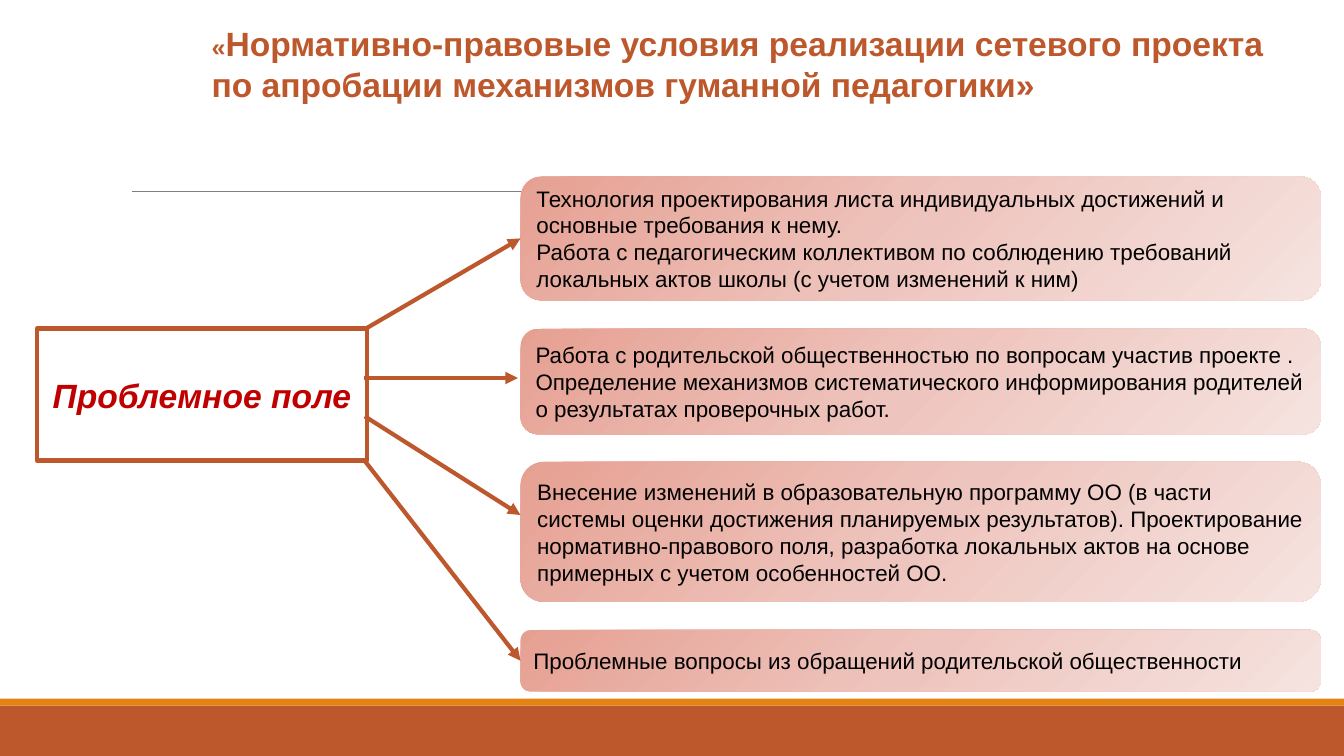
import copy

import pptx
import pptx.dml.color
import pptx.enum.shapes
import pptx.enum.text
import pptx.oxml
import pptx.oxml.ns
import pptx.util

Pt = pptx.util.Pt
SHAPE = pptx.enum.shapes.MSO_SHAPE
ALIGN = pptx.enum.text.PP_ALIGN
MIDDLE = pptx.enum.text.MSO_ANCHOR.MIDDLE

COLORS = {
    "rust": "BD582C",
    "orange": "E48312",
    "rule": "808080",
    "white": "FFFFFF",
    "red": "C00000",
    "black": "000000",
}
GRADIENT = [(0, "E6A092"), (0.5, "EEC5BE"), (1, "F6E3DF")]
CARD_LEFT, CARD_WIDTH = 371.8, 571.7
CARDS = [
    (126, 88.6, [
        "Технология проектирования листа индивидуальных достижений и основные требования к нему.",
        "Работа с педагогическим коллективом по соблюдению требований локальных актов школы (с учетом изменений к ним)",
    ]),
    (234.7, 75.6, [
        "Работа с родительской общественностью по вопросам участив проекте .",
        "Определение механизмов систематического информирования родителей о результатах проверочных работ.",
    ]),
    (329.8, 100.1, [
        "Внесение изменений в образовательную программу ОО (в части системы оценки достижения планируемых результатов). "
        "Проектирование нормативно-правового поля, разработка локальных актов на основе примерных с учетом особенностей ОО.",
    ]),
    (450, 43.9, ["Проблемные вопросы из обращений родительской общественности"]),
]


def rgb(name):
    return pptx.dml.color.RGBColor.from_string(COLORS.get(name, name))


def set_font(font, size, color, bold=False, italic=False):
    font.name = "Arial"
    font.size = Pt(size)
    font.bold = bold
    font.italic = italic
    font.color.rgb = rgb(color)


def add_box(s, kind, x, y, w, h, fill=None, line=None):
    sp = s.shapes.add_shape(kind, Pt(x), Pt(y), Pt(w), Pt(h))
    sp.shadow.inherit = False
    if fill:
        sp.fill.solid()
        sp.fill.fore_color.rgb = rgb(fill)
    if line:
        sp.line.color.rgb = rgb(line)
        sp.line.width = Pt(3)
    else:
        sp.line.fill.background()
    return sp


def add_line(s, x1, y1, x2, y2, color, width, arrow=False):
    cx = s.shapes.add_connector(
        pptx.enum.shapes.MSO_CONNECTOR.STRAIGHT, Pt(x1), Pt(y1), Pt(x2), Pt(y2))
    cx.line.color.rgb = rgb(color)
    cx.line.width = Pt(width)
    if arrow:
        tail = pptx.oxml.parse_xml(
            f'<a:tailEnd {pptx.oxml.ns.nsdecls("a")} type="triangle"/>')
        cx.line._get_or_add_ln().append(tail)
    cx._element.spPr.append(
        pptx.oxml.parse_xml(f'<a:effectLst {pptx.oxml.ns.nsdecls("a")}/>'))
    return cx


def add_gradient(sp):
    sp.fill.gradient()
    sp.fill.gradient_angle = 315
    stops = sp._element.spPr.find(".//" + pptx.oxml.ns.qn("a:gsLst"))
    stops.insert(1, copy.deepcopy(stops[0]))
    for stop, (position, color) in zip(sp.fill.gradient_stops, GRADIENT):
        stop.position = position
        stop.color.rgb = rgb(color)


def add_card(s, y, h, texts):
    sp = add_box(s, SHAPE.ROUNDED_RECTANGLE, CARD_LEFT, y, CARD_WIDTH, h)
    add_gradient(sp)
    tf = sp.text_frame
    tf.word_wrap = True
    tf.vertical_anchor = MIDDLE
    for i, text in enumerate(texts):
        p = tf.add_paragraph() if i else tf.paragraphs[0]
        p.text = text
        p.alignment = ALIGN.LEFT
        set_font(p.font, 16, "black")
    return sp


def add_title(s):
    tf = s.shapes.add_textbox(Pt(144), Pt(13), Pt(774), Pt(65.5)).text_frame
    tf.word_wrap = True
    p = tf.paragraphs[0]
    for text, size in [
        ("«", 18),
        ("Нормативно-правовые условия реализации сетевого проекта по апробации механизмов гуманной педагогики»", 24),
    ]:
        r = p.add_run()
        r.text = text
        set_font(r.font, size, "rust", bold=True)


def add_problem_box(s):
    sp = add_box(s, SHAPE.RECTANGLE, 26.6, 234.7, 235.4, 94.3, "white", "rust")
    tf = sp.text_frame
    tf.word_wrap = True
    tf.vertical_anchor = MIDDLE
    p = tf.paragraphs[0]
    p.text = "Проблемное поле"
    p.alignment = ALIGN.CENTER
    set_font(p.font, 24, "red", bold=True, italic=True)


def main():
    prs = pptx.Presentation()
    prs.slide_width, prs.slide_height = Pt(960), Pt(540)
    s = prs.slides.add_slide(prs.slide_layouts[6])

    add_box(s, SHAPE.RECTANGLE, 0, 504, 960, 36, "rust")
    add_box(s, SHAPE.RECTANGLE, 0, 499, 960, 5, "orange")
    add_line(s, 94.3, 136.8, 879, 136.8, "rule", 0.5)
    add_problem_box(s)
    add_title(s)

    cards = [add_card(s, *card) for card in CARDS]
    add_line(s, 261.4, 234.7, CARD_LEFT, 170.3, "rust", 3, True).end_connect(cards[0], 1)
    add_line(s, 260, 270, 370, 270, "rust", 3, True)
    add_line(s, 260.6, 297.4, CARD_LEFT, 367.9, "rust", 3, True)
    add_line(s, 260, 328.5, CARD_LEFT, 472, "rust", 3, True).end_connect(cards[3], 1)

    prs.save("out.pptx")


if __name__ == "__main__":
    main()
